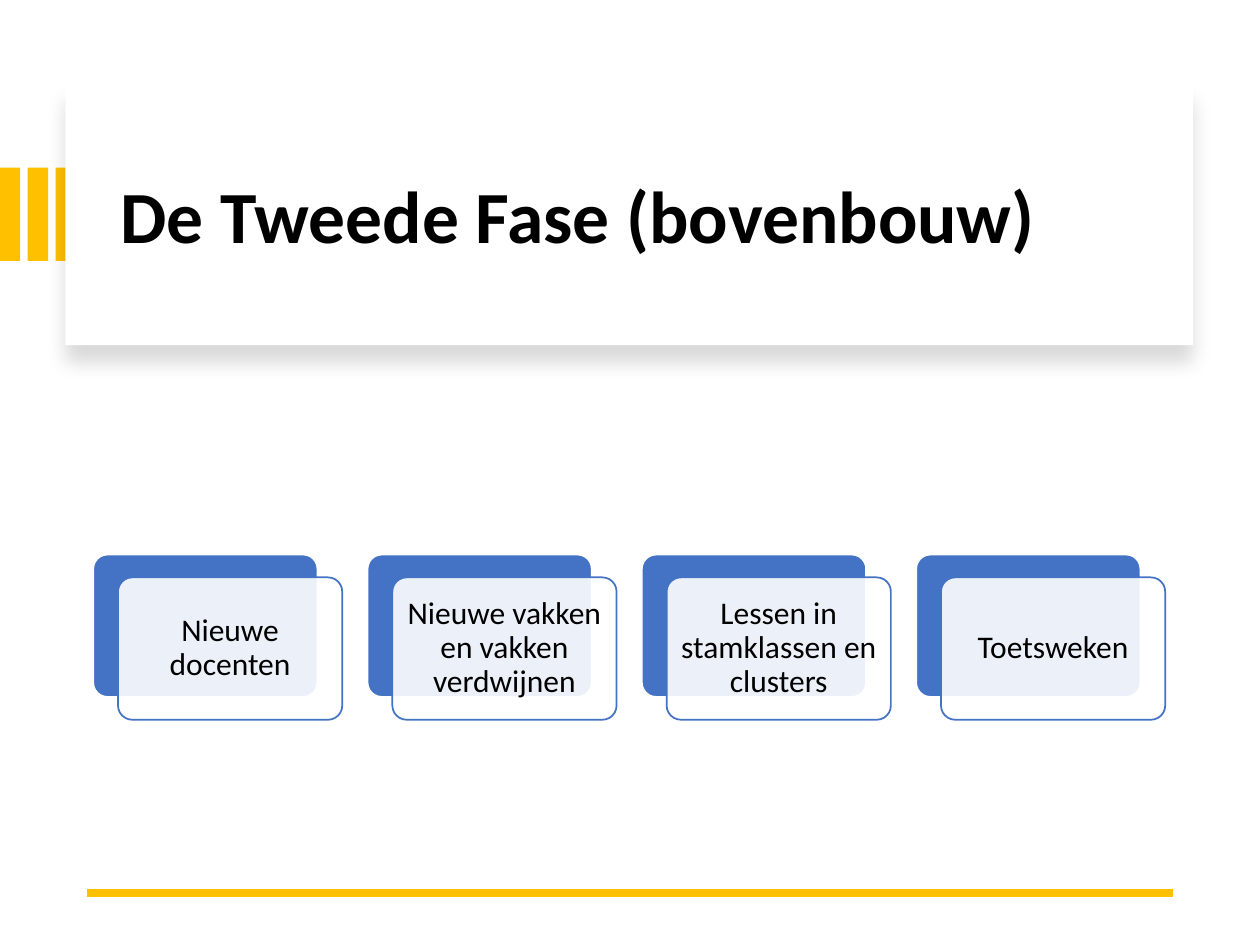
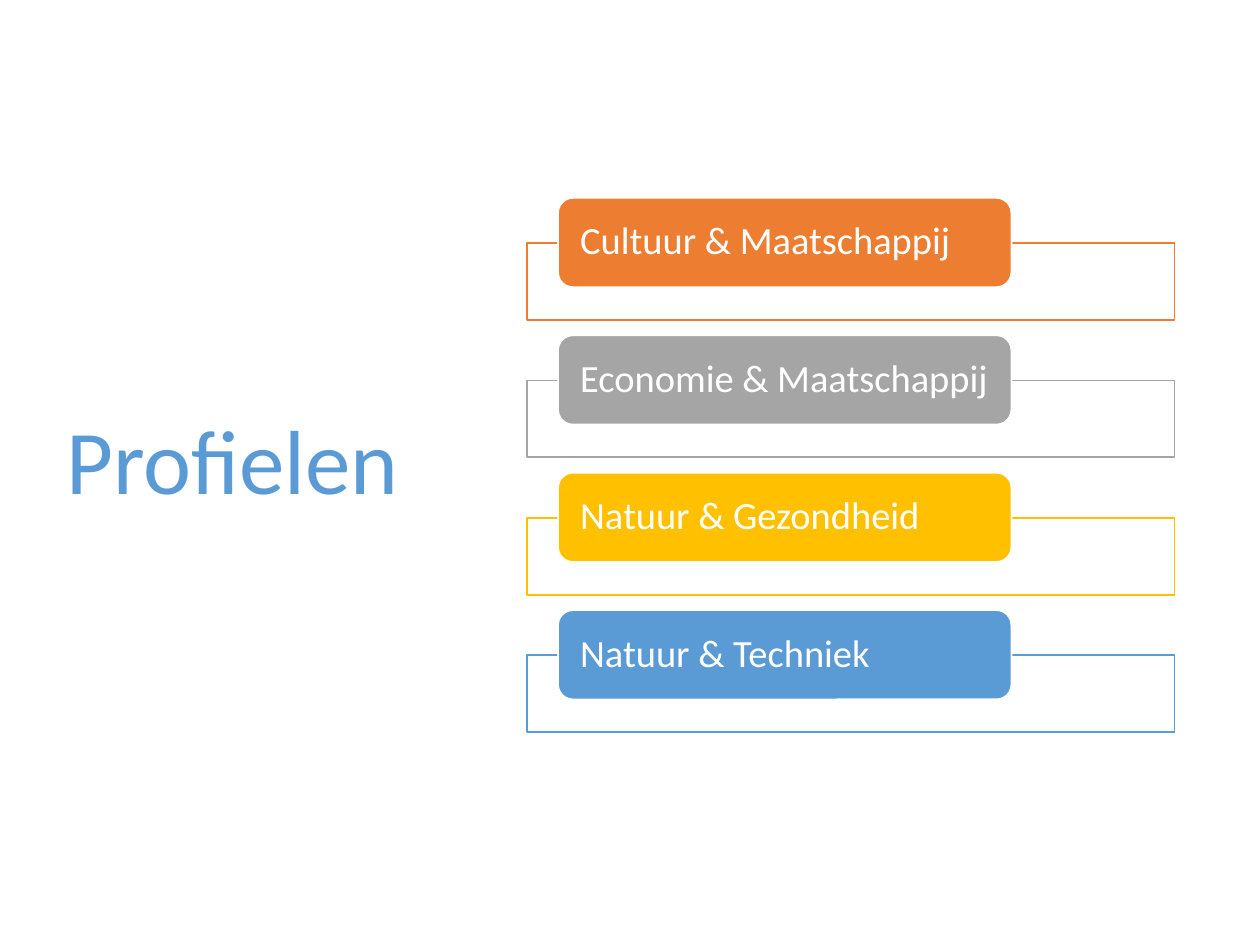
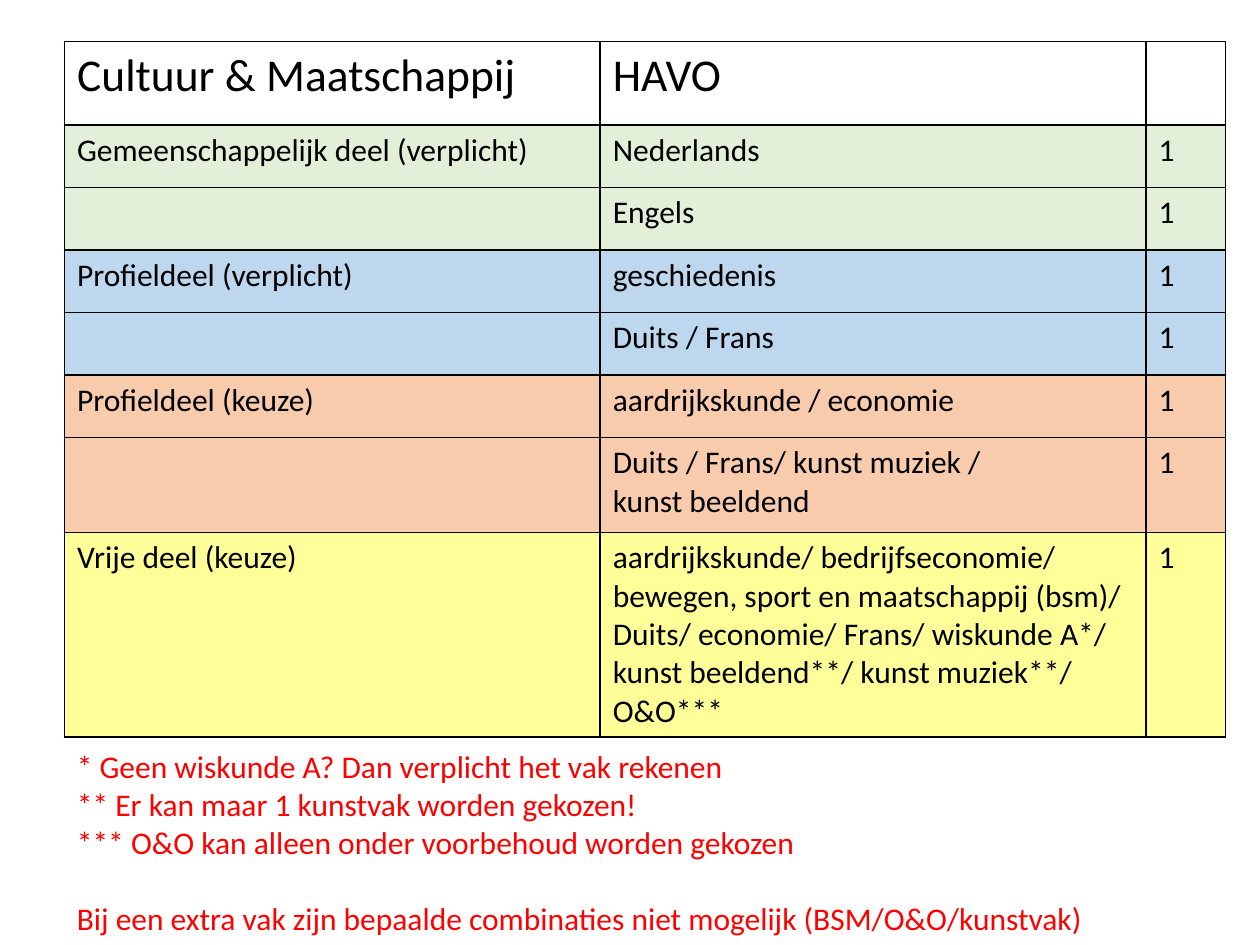
"""Build three slides on the upper school: changes, profiles and the subjects of one profile."""
from lxml import etree
from pptx import Presentation
from pptx.dml.color import RGBColor
from pptx.enum.shapes import MSO_CONNECTOR, MSO_SHAPE
from pptx.enum.text import MSO_ANCHOR, PP_ALIGN
from pptx.oxml import parse_xml
from pptx.oxml.ns import nsdecls, qn
from pptx.util import Cm, Pt

RECT, ROUND = MSO_SHAPE.RECTANGLE, MSO_SHAPE.ROUNDED_RECTANGLE
LEFT, CENTER = PP_ALIGN.LEFT, PP_ALIGN.CENTER
TOP, MIDDLE = MSO_ANCHOR.TOP, MSO_ANCHOR.MIDDLE
FONT = "Calibri"
WHITE, BLACK, RED = "FFFFFF", "000000", "FF0000"
GOLD, BLUE, SKY, ORANGE, GREY = "FFC000", "4472C4", "5B9BD5", "ED7D31", "A5A5A5"
GREEN_TINT, BLUE_TINT, ORANGE_TINT, YELLOW_TINT = "E2F0D9", "BDD7EE", "F8CBAD", "FFFF99"
rgb = RGBColor.from_string


def add_box(slide, kind, x, y, w, h, fill, line=None, alpha=None):
    sp = slide.shapes.add_shape(kind, Cm(x), Cm(y), Cm(w), Cm(h))
    sp.shadow.inherit = False
    sp.fill.solid()
    sp.fill.fore_color.rgb = rgb(fill)
    if line:
        sp.line.color.rgb = rgb(line)
        sp.line.width = Pt(1)
    else:
        sp.line.fill.background()
    if alpha:
        clr = sp._element.spPr.find(qn("a:solidFill"))[0]
        etree.SubElement(clr, qn("a:alpha")).set("val", str(alpha * 1000))
    return sp


def set_text(tf, text, size, color, bold=False, align=LEFT, anchor=MIDDLE, spacing=0.9):
    tf.text = text
    tf.word_wrap = True
    tf.vertical_anchor = anchor
    for p in tf.paragraphs:
        p.alignment = align
        p.line_spacing = spacing
        for r in p.runs:
            r.font.name = FONT
            r.font.size = Pt(size)
            r.font.bold = bold
            r.font.color.rgb = rgb(color)


prs = Presentation()
prs.slide_width, prs.slide_height = Cm(25.4), Cm(19.05)
blank = prs.slide_layouts[6]

s = prs.slides.add_slide(blank)
for i in range(3):
    add_box(s, RECT, i * 0.56, 3.38, 0.41, 1.88, GOLD)
card = add_box(s, RECT, 1.32, 1.7, 22.73, 5.26, WHITE)
card._element.spPr.find(qn("a:effectLst")).append(parse_xml(
    f'<a:outerShdw {nsdecls("a")} blurRad="{Pt(11)}" dist="{Pt(10)}" dir="5400000" '
    'algn="t" rotWithShape="0"><a:srgbClr val="000000"><a:alpha val="15000"/>'
    '</a:srgbClr></a:outerShdw>'))
title = s.shapes.add_textbox(Cm(2.18), Cm(2.26), Cm(21.18), Cm(4.32))
set_text(title.text_frame, "De Tweede Fase (bovenbouw)", 42, BLACK, bold=True)

rule = s.shapes.add_connector(MSO_CONNECTOR.STRAIGHT, Cm(23.65), Cm(18.01), Cm(1.75), Cm(18.01))
rule.line.color.rgb = rgb(GOLD)
rule.line.width = Pt(4.5)
etree.SubElement(rule._element.spPr, qn("a:effectLst"))

changes = ["Nieuwe docenten", "Nieuwe vakken en vakken verdwijnen",
           "Lessen in stamklassen en clusters", "Toetsweken"]
for i, change in enumerate(changes):
    x = 1.88 + i * 5.53
    back = add_box(s, ROUND, x, 11.18, 4.52, 2.87, BLUE, WHITE)
    front = add_box(s, ROUND, x + 0.5, 11.64, 4.52, 2.87, WHITE, BLUE, alpha=90)
    back.adjustments[0] = front.adjustments[0] = 0.1
    tf = front.text_frame
    tf.margin_left = tf.margin_right = tf.margin_top = tf.margin_bottom = Cm(0.18)
    set_text(tf, change, 18, BLACK, align=CENTER)

s = prs.slides.add_slide(blank)
title = s.shapes.add_textbox(Cm(1.09), Cm(1.73), Cm(7.92), Cm(15.29))
set_text(title.text_frame, "Profielen", 52, SKY)

profiles = [("Cultuur & Maatschappij", ORANGE), ("Economie & Maatschappij", GREY),
            ("Natuur & Gezondheid", GOLD), ("Natuur & Techniek", SKY)]
for i, (profile, color) in enumerate(profiles):
    y = 3.99 + i * 2.77
    add_box(s, RECT, 10.62, y + 0.91, 13.06, 1.55, WHITE, color, alpha=90)
    tab = add_box(s, ROUND, 11.25, y, 9.14, 1.8, color, WHITE)
    tf = tab.text_frame
    tf.margin_left = tf.margin_right = Cm(0.36)
    tf.margin_top = tf.margin_bottom = 0
    set_text(tf, profile, 22, WHITE)

s = prs.slides.add_slide(blank)
rows = [
    (1.68, WHITE, "Cultuur & Maatschappij", "HAVO", ""),
    (1.26, GREEN_TINT, "Gemeenschappelijk deel (verplicht)", "Nederlands", "1"),
    (1.26, GREEN_TINT, "", "Engels", "1"),
    (1.26, BLUE_TINT, "Profieldeel (verplicht)", "geschiedenis", "1"),
    (1.26, BLUE_TINT, "", "Duits / Frans", "1"),
    (1.26, ORANGE_TINT, "Profieldeel (keuze)", "aardrijkskunde / economie", "1"),
    (1.91, ORANGE_TINT, "", "Duits / Frans/ kunst muziek /\nkunst beeldend", "1"),
    (3.99, YELLOW_TINT, "Vrije deel (keuze)",
     "aardrijkskunde/ bedrijfseconomie/\nbewegen, sport en maatschappij (bsm)/ Duits/ economie/ "
     "Frans/ wiskunde A*/ kunst beeldend**/ kunst muziek**/ O&O***", "1"),
]
widths = [10.8, 11, 1.6]
height = sum(row[0] for row in rows)
table = s.shapes.add_table(len(rows), len(widths), Cm(1.3), Cm(0.84),
                           Cm(sum(widths)), Cm(height)).table
table.first_row = table.horz_banding = False
for column, width in zip(table.columns, widths):
    column.width = Cm(width)
for i, (row_height, fill, *texts) in enumerate(rows):
    table.rows[i].height = Cm(row_height)
    for j, text in enumerate(texts):
        cell = table.cell(i, j)
        set_text(cell.text_frame, text, 18 if i else 26, BLACK, anchor=TOP, spacing=1)
        tcPr = cell._tc.get_or_add_tcPr()
        for side in ("lnL", "lnR", "lnT", "lnB"):
            tcPr.append(parse_xml(
                f'<a:{side} {nsdecls("a")} w="{Pt(1)}"><a:solidFill>'
                f'<a:srgbClr val="{BLACK}"/></a:solidFill></a:{side}>'))
        cell.fill.solid()
        cell.fill.fore_color.rgb = rgb(fill)

notes = ["* Geen wiskunde A? Dan verplicht het vak rekenen",
         "** Er kan maar 1 kunstvak worden gekozen!",
         "*** O&O kan alleen onder voorbehoud worden gekozen",
         "Bij een extra vak zijn bepaalde combinaties niet mogelijk (BSM/O&O/kunstvak)"]
tf = s.shapes.add_textbox(Cm(1.3), Cm(14.94), Cm(21.79), Cm(4.11)).text_frame
set_text(tf, "\n".join(notes), 18, RED, anchor=TOP, spacing=1)
tf.paragraphs[-1].space_before = Pt(22)

prs.save("out.pptx")
